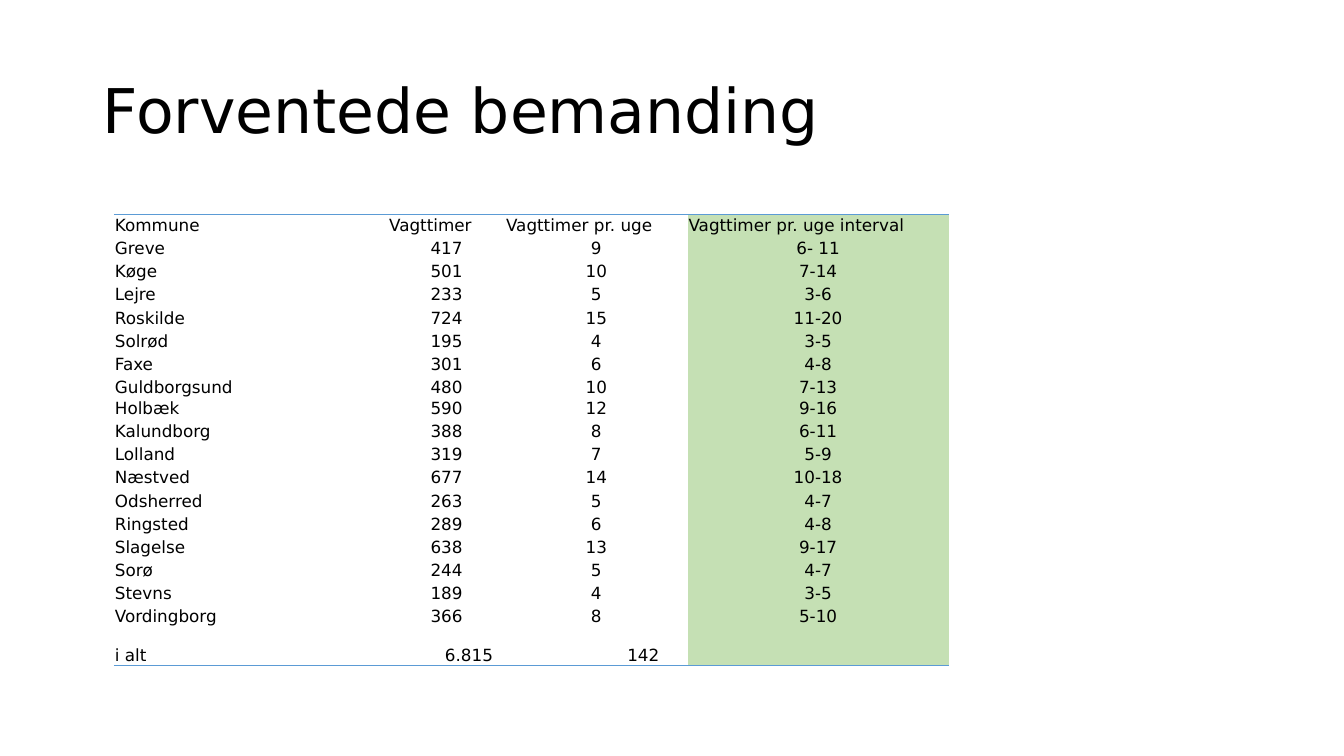
import pptx
import pptx.util
import pptx.dml.color
import pptx.enum.text
import pptx.oxml.ns
import lxml.etree

Inches = pptx.util.Inches
Pt = pptx.util.Pt
RGBColor = pptx.dml.color.RGBColor
ALIGN = pptx.enum.text.PP_ALIGN
ANCHOR = pptx.enum.text.MSO_ANCHOR
qn = pptx.oxml.ns.qn

BLACK = RGBColor(0x00, 0x00, 0x00)
GREEN = RGBColor(0xC5, 0xE0, 0xB4)
BLUE = RGBColor(0x5B, 0x9B, 0xD5)
FONT = "DejaVu Sans"
PLAIN = "{2D5ABB26-0587-4C30-8999-92F81FD0307C}"  # table style without grid

ROWS = [
    ("Kommune", "Vagttimer", "Vagttimer pr. uge", "Vagttimer pr. uge interval"),
    ("Greve", "417", "9", "6- 11"),
    ("Køge", "501", "10", "7-14"),
    ("Lejre", "233", "5", "3-6"),
    ("Roskilde", "724", "15", "11-20"),
    ("Solrød", "195", "4", "3-5"),
    ("Faxe", "301", "6", "4-8"),
    ("Guldborgsund", "480", "10", "7-13"),
    ("Holbæk", "590", "12", "9-16"),
    ("Kalundborg", "388", "8", "6-11"),
    ("Lolland", "319", "7", "5-9"),
    ("Næstved", "677", "14", "10-18"),
    ("Odsherred", "263", "5", "4-7"),
    ("Ringsted", "289", "6", "4-8"),
    ("Slagelse", "638", "13", "9-17"),
    ("Sorø", "244", "5", "4-7"),
    ("Stevns", "189", "4", "3-5"),
    ("Vordingborg", "366", "8", "5-10"),
    ("i alt", "6.815", "142", ""),
]
LAST = len(ROWS) - 1
WIDTHS = [2.72, 1.16, 1.81, 2.59]
HEIGHT = 0.23
HEIGHTS = {0: 0.2, 8: 0.19, LAST: 0.38}  # rows that differ
INDENTS = {1: 0.12, 2: 0.28}  # right margins of the totals


def add_run(para, text, size):
    run = para.add_run()
    run.text = text
    run.font.name = FONT
    run.font.size = Pt(size)
    run.font.color.rgb = BLACK


def add_title(slide, left, top, width, height):
    title = slide.shapes.title
    title.left, title.top = Inches(left), Inches(top)
    title.width, title.height = Inches(width), Inches(height)
    frame = title.text_frame
    frame.word_wrap = True
    frame.vertical_anchor = ANCHOR.MIDDLE
    para = frame.paragraphs[0]
    para.alignment = ALIGN.LEFT
    para.line_spacing = 0.9
    add_run(para, "Forventede bemanding", 44)


def add_rule(cell, side):
    line = lxml.etree.Element(qn("a:" + side), w=str(Pt(1)))
    fill = lxml.etree.SubElement(line, qn("a:solidFill"))
    lxml.etree.SubElement(fill, qn("a:srgbClr"), val=str(BLUE))
    cell._tc.get_or_add_tcPr().insert(0, line)


def fill_cell(cell, row, col, text):
    cell.vertical_anchor = ANCHOR.BOTTOM
    cell.margin_left = cell.margin_right = cell.margin_top = Inches(0.01)
    cell.margin_bottom = 0
    if col == 3:
        cell.fill.solid()
        cell.fill.fore_color.rgb = GREEN
    else:
        cell.fill.background()

    # Names and headings left, values centred, totals right
    para = cell.text_frame.paragraphs[0]
    if row == 0 or col == 0:
        para.alignment = ALIGN.LEFT
    elif row == LAST and col in INDENTS:
        para.alignment = ALIGN.RIGHT
        cell.margin_right = Inches(INDENTS[col])
    else:
        para.alignment = ALIGN.CENTER
    if text:
        add_run(para, text, 12)

    # Rules above the heading and below the totals
    if row == 0:
        add_rule(cell, "lnT")
    elif row == LAST:
        add_rule(cell, "lnB")


def add_hours(slide, left, top, width, height):
    frame = slide.shapes.add_table(
        len(ROWS), len(WIDTHS),
        Inches(left), Inches(top), Inches(width), Inches(height))
    table = frame.table
    table.first_row = table.horz_banding = False
    table._tbl.tblPr.find(qn("a:tableStyleId")).text = PLAIN
    for col, size in enumerate(WIDTHS):
        table.columns[col].width = Inches(size)
    for row, texts in enumerate(ROWS):
        table.rows[row].height = Inches(HEIGHTS.get(row, HEIGHT))
        for col, text in enumerate(texts):
            fill_cell(table.cell(row, col), row, col, text)


def main():
    deck = pptx.Presentation()
    deck.slide_width, deck.slide_height = Inches(13.33), Inches(7.5)
    slide = deck.slides.add_slide(deck.slide_layouts[5])
    add_hours(slide, 1.13, 2.13, 8.28, 4.45)
    add_title(slide, 0.92, 0.4, 11.5, 1.45)
    deck.save("out.pptx")


if __name__ == "__main__":
    main()
